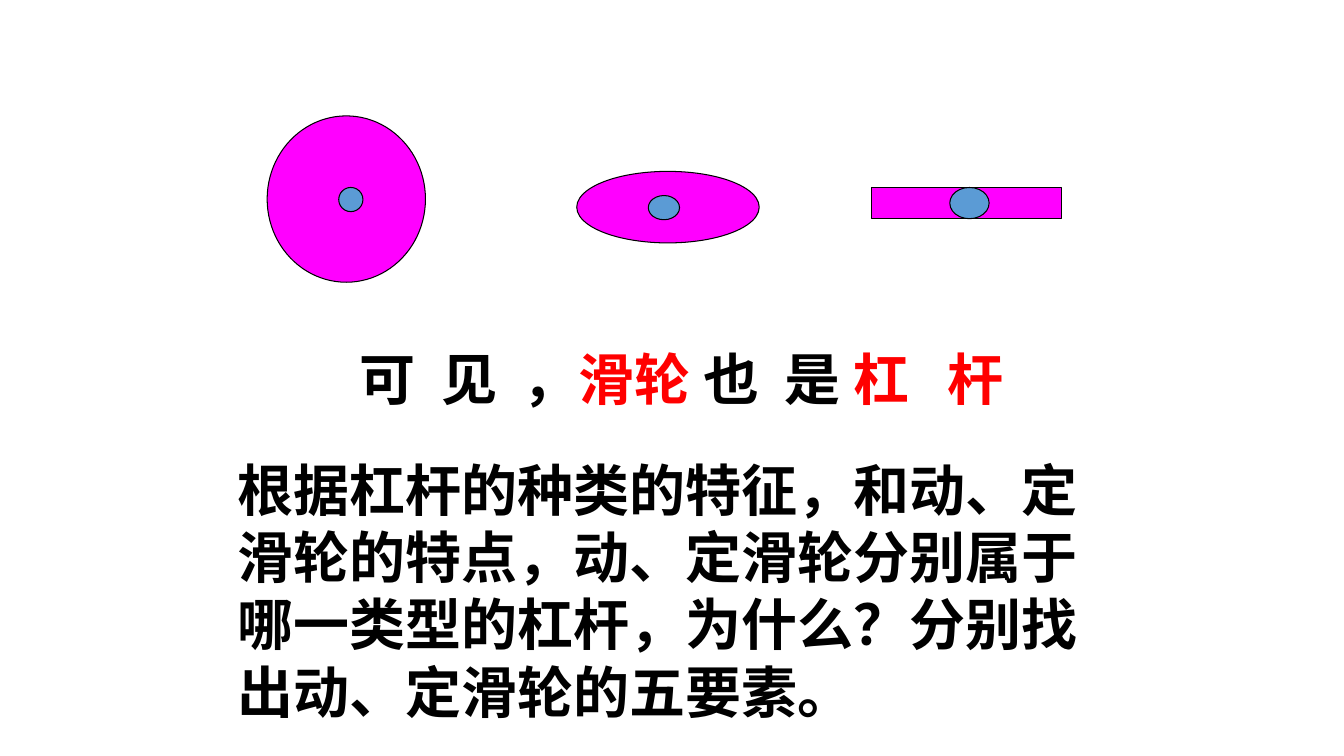
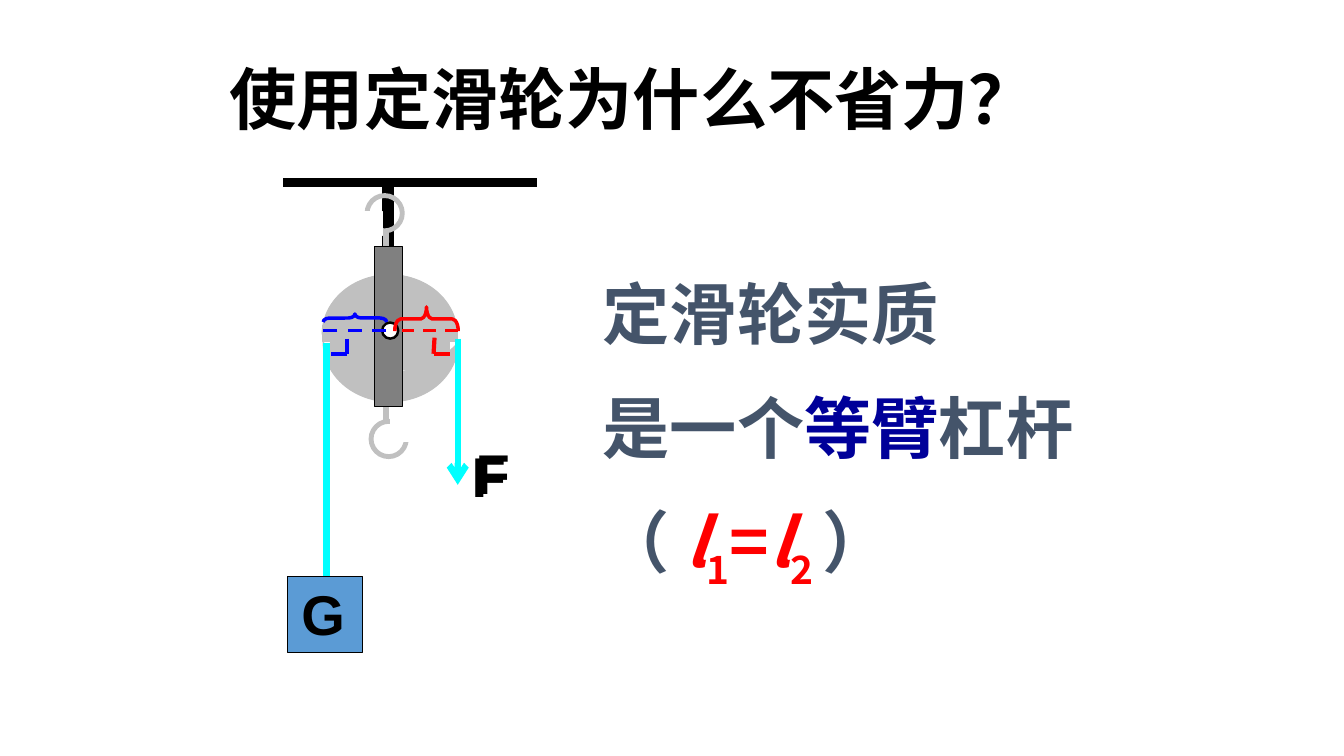
import pptx
import pptx.util
import pptx.dml.color
import pptx.enum.dml
import pptx.enum.shapes
import pptx.oxml
import pptx.oxml.ns

Inches, Pt = pptx.util.Inches, pptx.util.Pt
Kind = pptx.enum.shapes.MSO_SHAPE

BLACK, WHITE, RED, BLUE = "000000", "FFFFFF", "FF0000", "0000FF"
MAGENTA, SKY, CYAN = "FF00FF", "5B9BD5", "00FFFF"
SILVER, GRAY, SLATE, NAVY = "C0C0C0", "808080", "44546A", "000099"
LATIN, CHINESE = "Arial", "Noto Sans CJK SC"

PULLEY_VIEWS = [
    (Kind.OVAL, (2.65, 1.15, 1.57, 1.65), (3.36, 1.86, 0.24, 0.24)),
    (Kind.OVAL, (5.72, 1.7, 1.81, 0.71), (6.43, 1.94, 0.31, 0.24)),
    (Kind.RECTANGLE, (8.64, 1.86, 1.89, 0.31), (9.42, 1.86, 0.39, 0.31)),
]
CONCLUSION = [[("可  见  ，", BLACK), ("滑轮 ", RED), ("也  是 ", BLACK), ("杠   杆", RED)]]
QUESTION = [[("根据杠杆的种类的特征，和动、定滑轮的特点，动、定滑轮分别属于"
              "哪一类型的杠杆，为什么？分别找出动、定滑轮的五要素。", BLACK)]]

TITLE = [[("使用定滑轮为什么不省力？", BLACK)]]
ANSWER = [
    [("定滑轮实质", SLATE)],
    [("是一个", SLATE), ("等臂", NAVY), ("杠杆", SLATE)],
    [("（ ", SLATE), ("l", RED, "italic"), ("1", RED, "sub"), ("=", RED),
     ("l", RED, "italic"), ("2 ", RED, "sub"), ("）", SLATE)],
]
WHEEL = [
    (Kind.MOON, (3.57, 2.35, 0.59, 1.34), 90),
    (Kind.RECTANGLE, (3.28, 3.04, 1.18, 0.24), 0),
    (Kind.MOON, (3.58, 3.02, 0.59, 1.34), 270),
    (Kind.RECTANGLE, (3.28, 3.28, 1.18, 0.39), 0),
    (Kind.RECTANGLE, (3.2, 3.23, 1.34, 0.16), 0),
]
SUPPORTS = [(3.87, 1.81, 3.87, 3.27), (3.83, 1.86, 3.83, 3.32), (2.81, 1.81, 5.33, 1.81)]
HOOKS = [
    ((3.64, 1.94, 0.35, 0.35), (3.83, 2.29, 3.83, 2.45), (3.44, 2.1, 0.35, 0.24)),
    ((3.68, 4.18, 0.35, 0.35), (3.83, 4.03, 3.83, 4.18), (3.87, 4.14, 0.35, 0.24)),
]
LEVER_ARMS = [
    (BLUE, (3.48, 2.84, 0.08, 0.63), (0.8, 0.5), (3.83, 3.28, 3.12, 3.28), 2.5,
     [(3.44, 3.36, 3.44, 3.51), (3.44, 3.51, 3.28, 3.51)]),
    (RED, (4.11, 2.85, 0.24, 0.63), (0.24, 0.5), (4.54, 3.28, 3.99, 3.28), 2.25,
     [(4.46, 3.51, 4.3, 3.51), (4.3, 3.51, 4.31, 3.35)]),
]


def color(value):
    return pptx.dml.color.RGBColor.from_string(value)


def add_figure(page, kind, place, fill, line=BLACK, width=0.75, turn=0, adjust=()):
    shape = page.shapes.add_shape(kind, *map(Inches, place))
    shape.shadow.inherit = False
    shape.rotation = turn
    for index, value in enumerate(adjust):
        shape.adjustments[index] = value
    if fill:
        shape.fill.solid()
        shape.fill.fore_color.rgb = color(fill)
    else:
        shape.fill.background()
    shape.line.color.rgb = color(line)
    shape.line.width = Pt(width)


def add_line(page, ends, line, width, dashed=False, arrow=False):
    connector = page.shapes.add_connector(
        pptx.enum.shapes.MSO_CONNECTOR.STRAIGHT, *map(Inches, ends))
    connector.line.color.rgb = color(line)
    connector.line.width = Pt(width)
    if dashed:
        connector.line.dash_style = pptx.enum.dml.MSO_LINE.DASH
    if arrow:
        pptx.oxml.ns.qn("a:tailEnd")
        tail = connector.line._get_or_add_ln().makeelement(
            pptx.oxml.ns.qn("a:tailEnd"), {"type": "arrow"})
        connector.line._get_or_add_ln().append(tail)
    properties = connector._element.spPr
    properties.append(properties.makeelement(pptx.oxml.ns.qn("a:effectLst"), {}))


def add_text(page, place, paragraphs, size, latin=LATIN):
    box = page.shapes.add_textbox(*map(Inches, place))
    box.text_frame.word_wrap = True
    for index, spans in enumerate(paragraphs):
        para = box.text_frame.paragraphs[0] if index == 0 else box.text_frame.add_paragraph()
        para.space_before = Pt(size / 2 if index else 0)
        para.font.size = Pt(size)
        para.font.bold = True
        para.font.name = latin
        for text, shade, *styles in spans:
            span = para.add_run()
            span.text = text
            span.font.size = Pt(size)
            span.font.bold = True
            span.font.name = latin
            span.font.color.rgb = color(shade)
            if "italic" in styles:
                span.font.italic = True
            properties = span.font._element
            if "sub" in styles:
                properties.set("baseline", "-25000")
            east = properties.makeelement(pptx.oxml.ns.qn("a:ea"), {"typeface": CHINESE})
            properties.append(east)


def build_views(page):
    for kind, body, axle in PULLEY_VIEWS:
        add_figure(page, kind, body, MAGENTA)
        add_figure(page, Kind.OVAL, axle, SKY)
    add_text(page, (3.47, 3.37, 7.88, 0.84), CONCLUSION, 40)
    add_text(page, (2.26, 4.47, 8.9, 2.79), QUESTION, 40)


def build_fixed_pulley(page):
    for ends in SUPPORTS:
        add_line(page, ends, BLACK, 6)
    for kind, place, turn in WHEEL:
        add_figure(page, kind, place, SILVER, SILVER, turn=turn)
    add_line(page, (4.54, 3.36, 4.54, 4.81), CYAN, 4.5, arrow=True)
    add_line(page, (3.24, 3.4, 3.24, 5.75), CYAN, 4.5)
    for left, top in [(4.58, 4.33), (4.62, 4.3)]:
        add_text(page, (left, top, 1.02, 0.77), [[("F", BLACK)]], 40)
    for ring, stem, opening in HOOKS:
        add_figure(page, Kind.OVAL, ring, None, SILVER, 3.5)
        add_line(page, stem, SILVER, 4.5)
        add_figure(page, Kind.RECTANGLE, opening, WHITE, WHITE)
    add_figure(page, Kind.RECTANGLE, (3.71, 2.45, 0.28, 1.58), GRAY)
    add_figure(page, Kind.OVAL, (3.79, 3.2, 0.16, 0.16), WHITE, width=1.75)
    add_figure(page, Kind.RECTANGLE, (2.85, 5.72, 0.75, 0.75), SKY)
    add_text(page, (2.89, 5.7, 0.91, 0.77), [[("G", BLACK)]], 40)
    for shade, brace, adjust, arm, width, corner in LEVER_ARMS:
        add_figure(page, Kind.LEFT_BRACE, brace, None, shade, 2.5, 90, adjust)
        add_line(page, arm, shade, width, dashed=True)
        for ends in corner:
            add_line(page, ends, shade, 3)
    add_text(page, (5.88, 2.65, 4.96, 3.33), ANSWER, 48, CHINESE)
    add_text(page, (2.18, 0.52, 9.49, 0.91), TITLE, 48)


def main():
    deck = pptx.Presentation()
    deck.slide_width, deck.slide_height = Inches(13.33), Inches(7.5)
    for build in (build_views, build_fixed_pulley):
        build(deck.slides.add_slide(deck.slide_layouts[6]))
    deck.save("out.pptx")


if __name__ == "__main__":
    main()
